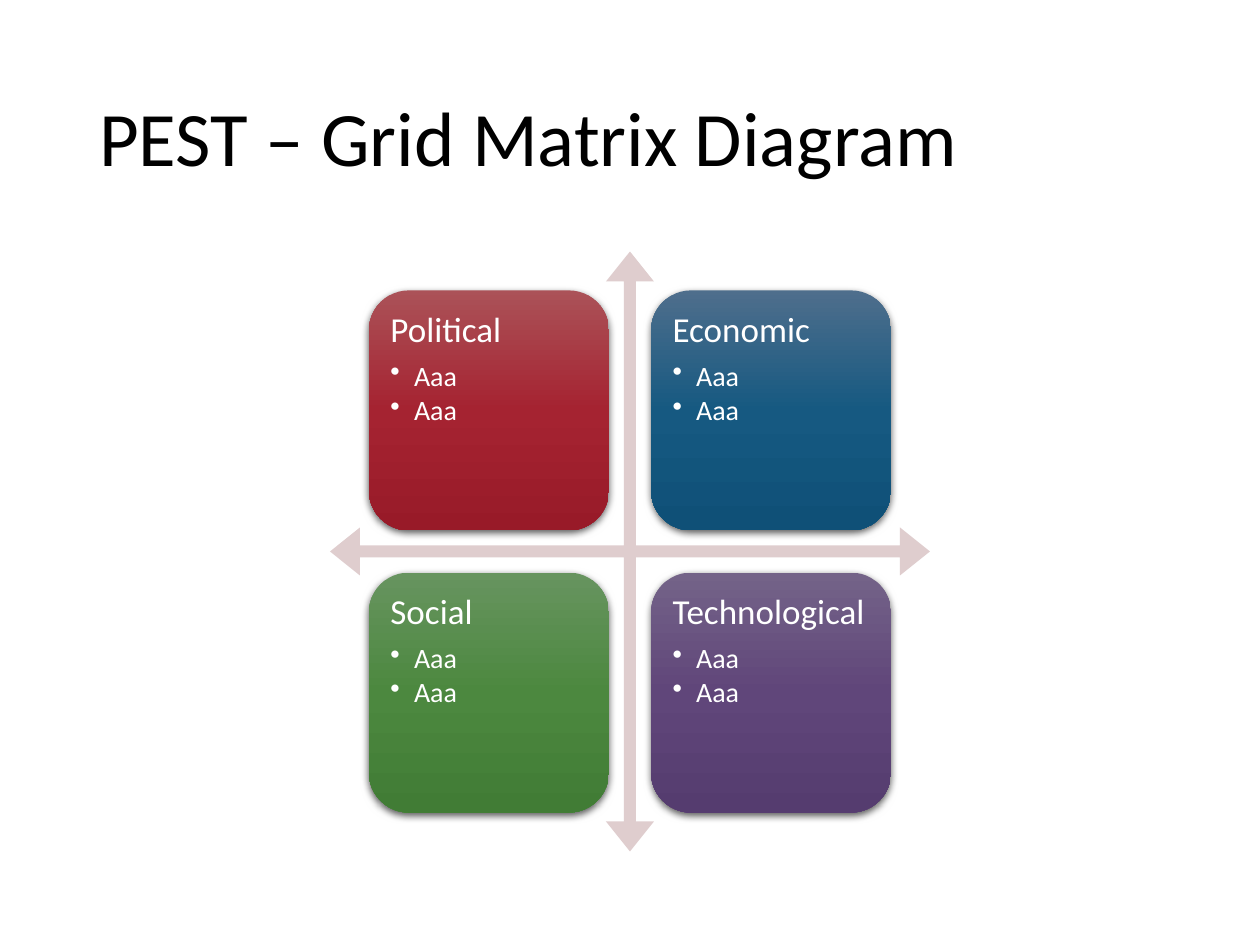
"""Build a PEST grid matrix slide with four gradient cards around a crossed arrow."""
import copy
import dataclasses

import lxml.etree
import pptx
import pptx.dml.color
import pptx.enum.shapes
import pptx.enum.text
import pptx.oxml.ns
import pptx.util

FONT = "Calibri"
CENTER_X, CENTER_Y = 360, 315.15
ARROW_SIDE = 342.86
CARD_SIDE = ARROW_SIDE * 0.4
CARD_OFFSET = 12.05
BULLET_INDENT = 13.5


@dataclasses.dataclass
class Card:
    """A quadrant's heading, bullets, gradient and grid place."""
    heading: str
    bullets: tuple[str, ...]
    gradient: tuple[str, str, str]
    row: int
    column: int


CARDS = [
    Card("Political", ("Aaa", "Aaa"), ("AB5258", "A52331", "981A28"), 0, 0),
    Card("Economic", ("Aaa", "Aaa"), ("4E6E8C", "165981", "0F5077"), 0, 1),
    Card("Social", ("Aaa", "Aaa"), ("67945F", "4C883F", "417C35"), 1, 0),
    Card("Technological", ("Aaa", "Aaa"), ("746388", "60467A", "553C6F"), 1, 1),
]


def color(value: str) -> pptx.dml.color.RGBColor:
    """Turn a hex string into a colour."""
    return pptx.dml.color.RGBColor.from_string(value)


def add_element(parent, tag: str, **attributes: str):
    """Append a DrawingML element to a parent."""
    return lxml.etree.SubElement(parent, pptx.oxml.ns.qn(tag), attributes)


def format_paragraph(para, size: float, value: str, space_after: float = 0) -> None:
    """Set the font, colour, alignment and spacing of a paragraph."""
    para.font.name = FONT
    para.font.size = pptx.util.Pt(size)
    para.font.color.rgb = color(value)
    para.alignment = pptx.enum.text.PP_ALIGN.LEFT
    para.line_spacing = 0.9
    para.space_before = pptx.util.Pt(0)
    para.space_after = pptx.util.Pt(space_after)


def add_bullet(para) -> None:
    """Give a paragraph a round bullet and a hanging indent."""
    para.level = 1
    properties = para._p.get_or_add_pPr()
    indent = pptx.util.Pt(BULLET_INDENT)
    properties.set("marL", str(indent))
    properties.set("indent", str(-indent))
    bullet = lxml.etree.Element(pptx.oxml.ns.qn("a:buChar"), char="•")
    run_defaults = properties.find(pptx.oxml.ns.qn("a:defRPr"))
    run_defaults.addprevious(bullet)


def add_shape(slide, kind, left: float, top: float, side: float):
    """Add a square, outline-free preset shape."""
    shape = slide.shapes.add_shape(
        kind, *(pptx.util.Pt(length) for length in (left, top, side, side)))
    shape.shadow.inherit = False
    shape.line.fill.background()
    return shape


def set_gradient(shape, values: tuple[str, str, str]) -> None:
    """Fill a shape with three evenly spaced colours from top to bottom."""
    shape.fill.gradient()
    shape.fill.gradient_angle = 270
    stops = shape._element.spPr.find(".//" + pptx.oxml.ns.qn("a:gsLst"))
    stops.append(copy.deepcopy(stops[-1]))
    for stop, position, value in zip(shape.fill.gradient_stops, (0, 0.5, 1), values):
        stop.position = position
        stop.color.rgb = color(value)


def add_shadow(shape) -> None:
    """Cast a soft shadow below a shape."""
    effects = shape._element.spPr.find(pptx.oxml.ns.qn("a:effectLst"))
    shadow = add_element(
        effects, "a:outerShdw", blurRad=str(pptx.util.Pt(4.5)),
        dist=str(pptx.util.Pt(1.5)), dir="5400000", algn="ctr", rotWithShape="0")
    shade = add_element(shadow, "a:srgbClr", val="000000")
    add_element(shade, "a:alpha", val="63000")


def add_title(slide, text: str) -> None:
    """Place and format the slide title."""
    title = slide.shapes.title
    title.left, title.top = pptx.util.Pt(49.5), pptx.util.Pt(28.75)
    title.width, title.height = pptx.util.Pt(621), pptx.util.Pt(104.4)
    title.text_frame.text = text
    title.text_frame.vertical_anchor = pptx.enum.text.MSO_ANCHOR.MIDDLE
    format_paragraph(title.text_frame.paragraphs[0], 44, "000000")


def add_axes(slide) -> None:
    """Draw the four-way arrow behind the cards."""
    axes = add_shape(
        slide, pptx.enum.shapes.MSO_SHAPE.QUAD_ARROW,
        CENTER_X - ARROW_SIDE / 2, CENTER_Y - ARROW_SIDE / 2, ARROW_SIDE)
    for index, value in enumerate((0.02, 0.04, 0.05)):
        axes.adjustments[index] = value
    axes.fill.solid()
    axes.fill.fore_color.rgb = color("DFCDCE")


def add_card(slide, card: Card) -> None:
    """Draw one quadrant with its heading and bullets."""
    step = CARD_SIDE + 2 * CARD_OFFSET
    box = add_shape(
        slide, pptx.enum.shapes.MSO_SHAPE.ROUNDED_RECTANGLE,
        CENTER_X - CARD_OFFSET - CARD_SIDE + card.column * step,
        CENTER_Y - CARD_OFFSET - CARD_SIDE + card.row * step, CARD_SIDE)
    set_gradient(box, card.gradient)
    add_shadow(box)
    frame = box.text_frame
    frame.word_wrap = True
    frame.vertical_anchor = pptx.enum.text.MSO_ANCHOR.TOP
    frame.margin_left = frame.margin_right = pptx.util.Pt(5.6)
    frame.margin_top = frame.margin_bottom = pptx.util.Pt(5.6)
    frame.text = "\n".join((card.heading, *card.bullets))
    heading, *bullets = frame.paragraphs
    format_paragraph(heading, 20, "FFFFFF", 7)
    for para in bullets:
        format_paragraph(para, 16, "FFFFFF", 2.4)
        add_bullet(para)


def main() -> None:
    """Create and save the deck."""
    deck = pptx.Presentation()
    deck.slide_width, deck.slide_height = pptx.util.Pt(720), pptx.util.Pt(540)
    slide = deck.slides.add_slide(deck.slide_layouts.get_by_name("Title Only"))
    add_title(slide, "PEST – Grid Matrix Diagram")
    add_axes(slide)
    for card in CARDS:
        add_card(slide, card)
    deck.save("out.pptx")


if __name__ == "__main__":
    main()
